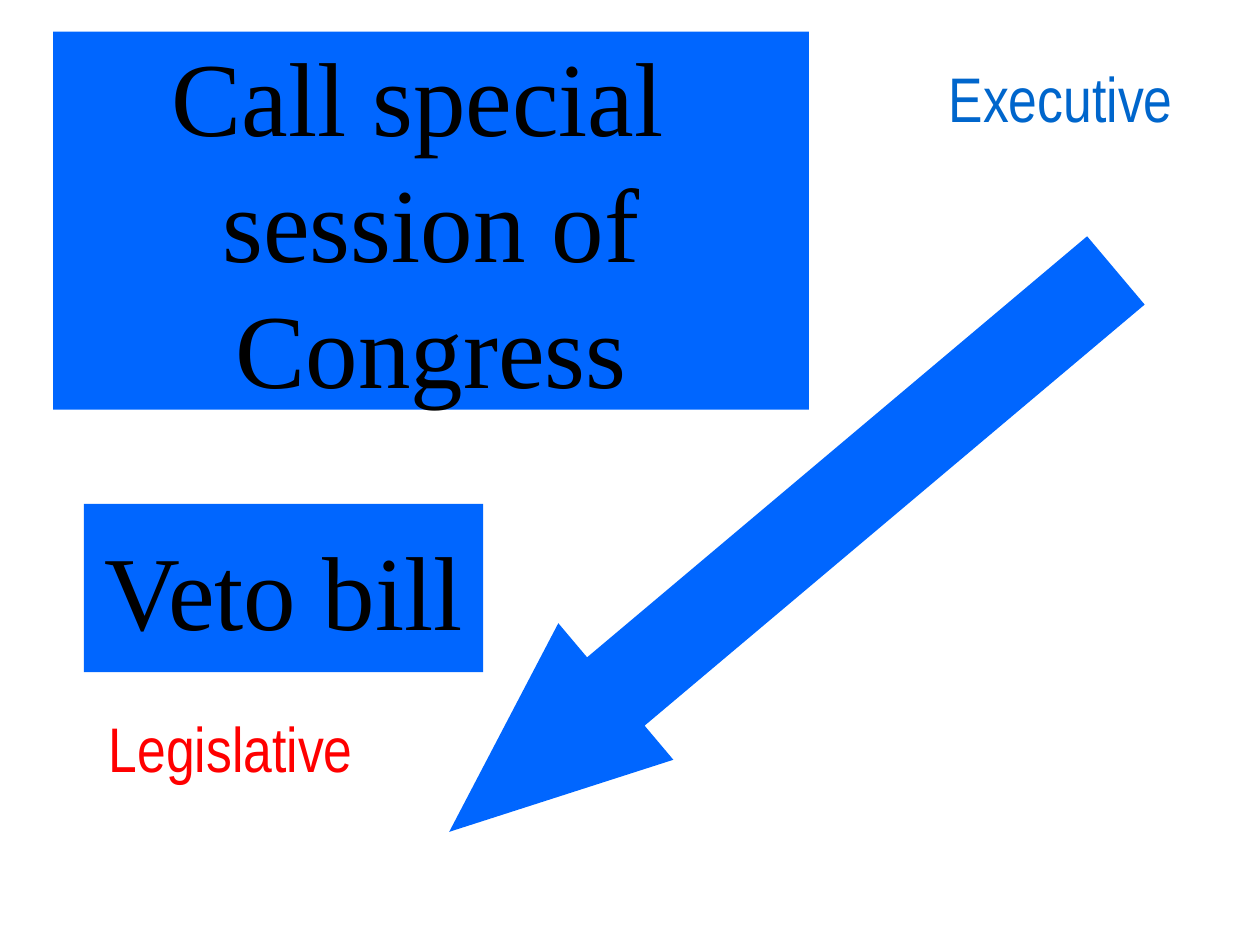
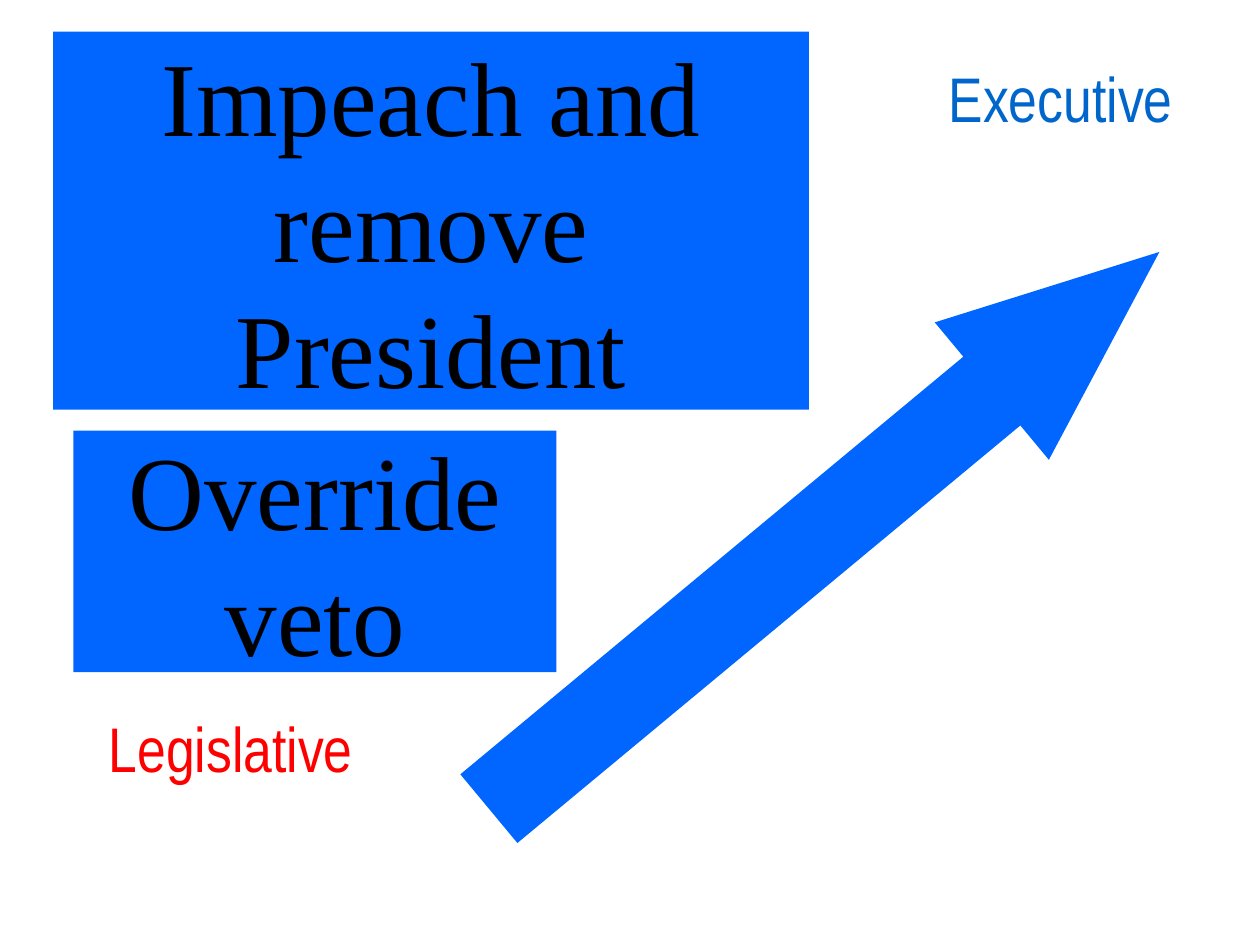
import pptx
import pptx.util
import pptx.dml.color
import pptx.enum.shapes
import pptx.enum.text

Cm = pptx.util.Cm
Kind = pptx.enum.shapes.MSO_SHAPE
Anchor = pptx.enum.text.MSO_ANCHOR

BLUE = "0066FF"
# Branch labels shared by both slides: text, colour, box in cm
LABELS = [
    ("Executive", "0066CC", (18.21, 1.07, 6.35, 3.18)),
    ("Legislative", "FF0000", (0.84, 14.17, 7.62, 3.28)),
]
TOP = (1.07, 0.64, 15.24, 7.62)


def color(code):
    return pptx.dml.color.RGBColor.from_string(code)


def write(shape, text, font="Times New Roman", size=60, ink="000000",
          anchor=Anchor.MIDDLE):
    """Put centred text into a shape, one paragraph per line."""
    frame = shape.text_frame
    frame.word_wrap = False
    frame.vertical_anchor = anchor
    frame.text = text
    for para in frame.paragraphs:
        para.alignment = pptx.enum.text.PP_ALIGN.CENTER
        for run in para.runs:
            run.font.name = font
            run.font.size = pptx.util.Pt(size)
            run.font.color.rgb = color(ink)


def block(slide, kind, box):
    """Add a flat blue shape without a line."""
    shape = slide.shapes.add_shape(kind, *map(Cm, box))
    shape.shadow.inherit = False
    shape.fill.solid()
    shape.fill.fore_color.rgb = color(BLUE)
    shape.line.fill.background()
    return shape


def label(slide, text, ink, box):
    shape = slide.shapes.add_textbox(*map(Cm, box))
    write(shape, text, font="Arial Narrow", size=36, ink=ink,
          anchor=Anchor.TOP)


def arrow(slide, left, top, angle):
    shape = block(slide, Kind.RIGHT_ARROW, (left, top, 17.57, 3.6))
    shape.adjustments[0] = 0.5
    shape.adjustments[1] = 1.22
    shape.rotation = angle


def power(slide, text, box):
    write(block(slide, Kind.RECTANGLE, box), text)


def check(deck, aim, powers):
    """Build one slide: the powers one branch holds over the other."""
    slide = deck.slides.add_slide(deck.slide_layouts[6])
    for item in LABELS:
        label(slide, *item)
    arrow(slide, *aim)
    for text, box in powers:
        power(slide, text, box)


def main():
    deck = pptx.Presentation()
    deck.slide_width, deck.slide_height = Cm(25.4), Cm(19.05)

    # Executive checks legislative
    check(deck, (6.99, 9.31, 139.9), [
        ("Veto bill", (1.69, 10.16, 8.05, 3.39)),
        ("Call special \nsession of\nCongress", TOP),
    ])
    # Legislative checks executive
    check(deck, (7.83, 8.89, 320.3), [
        ("Override\nveto", (1.48, 8.68, 9.74, 4.87)),
        ("Impeach and\nremove\nPresident", TOP),
    ])
    deck.save("out.pptx")


if __name__ == "__main__":
    main()
